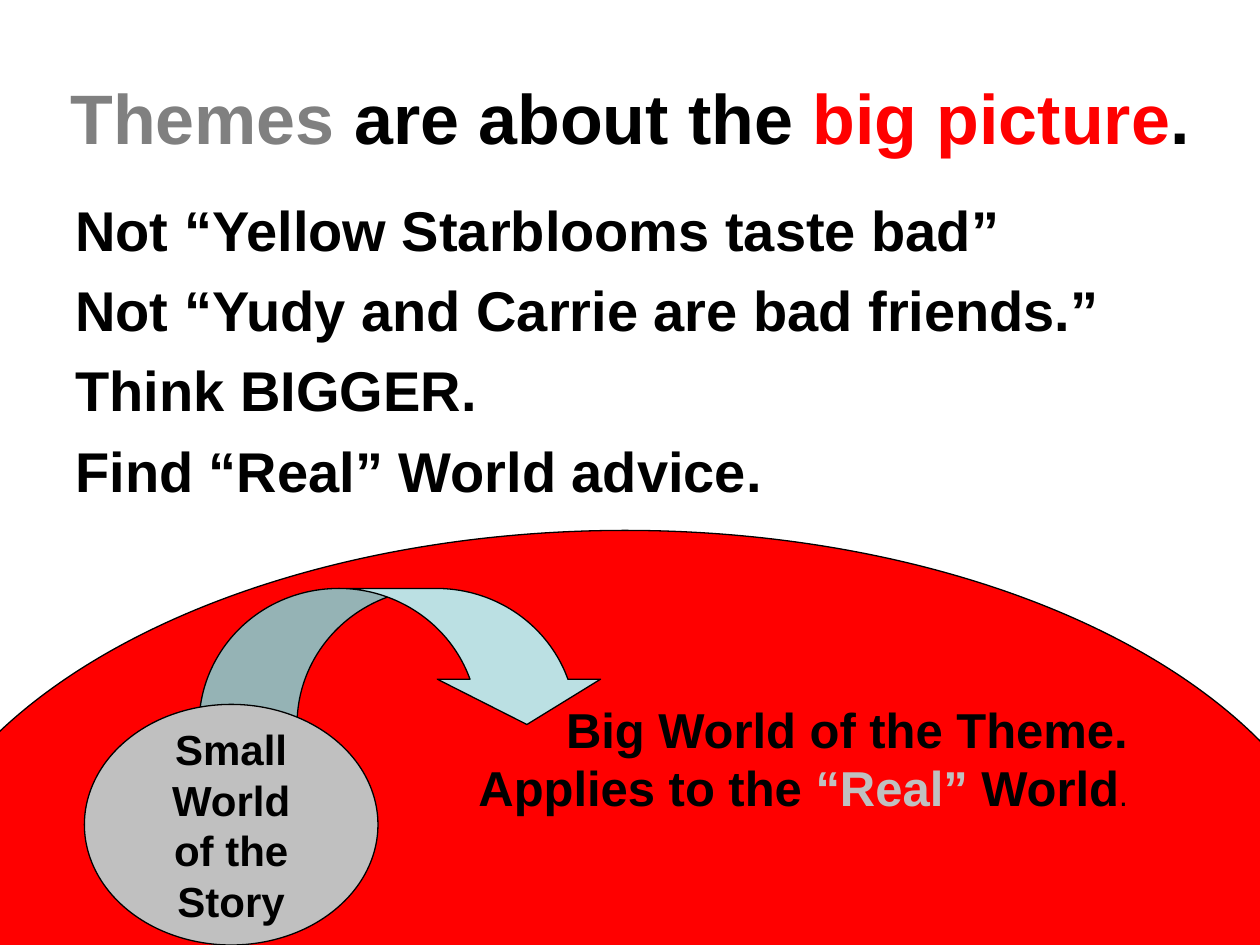
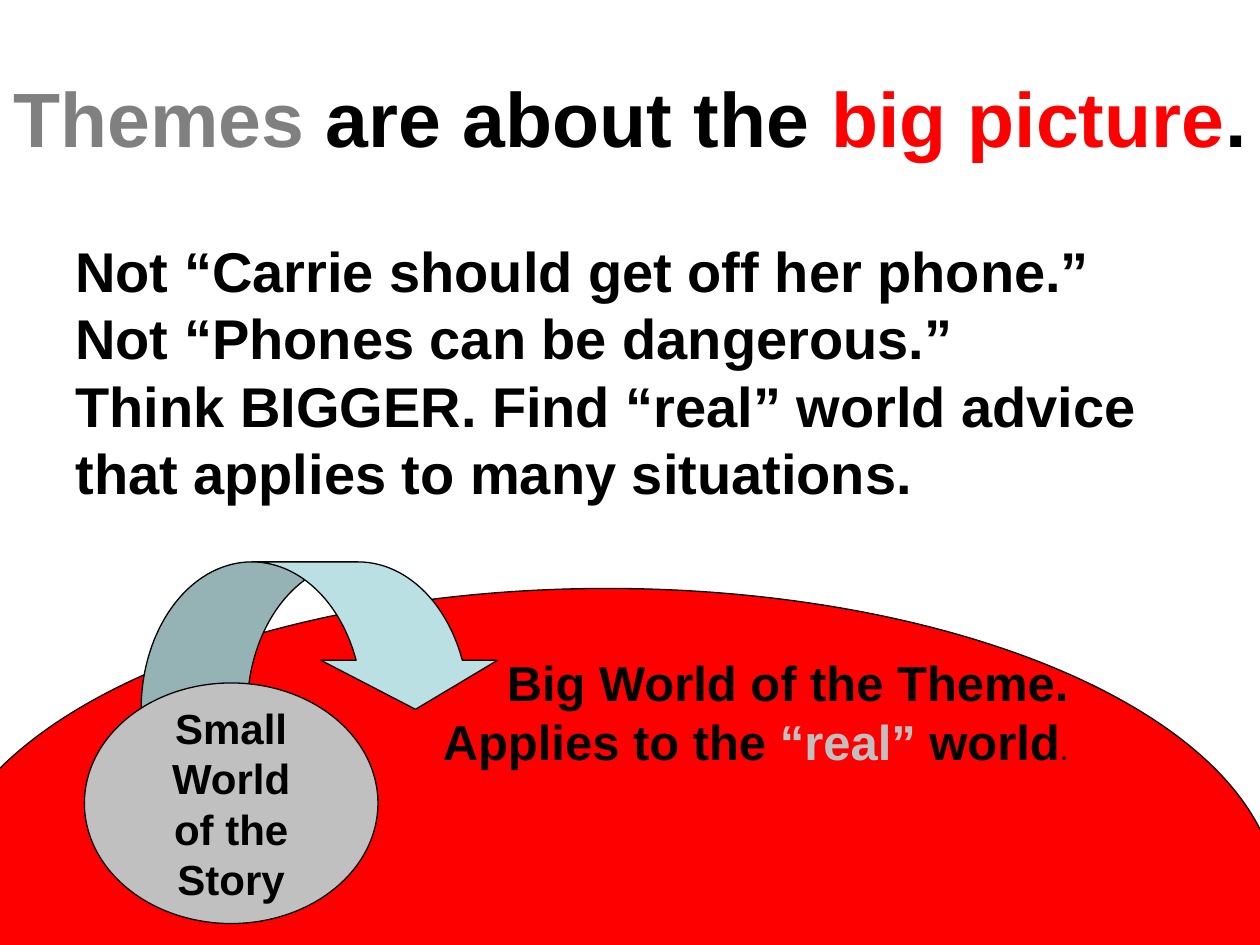
from pptx import Presentation
from pptx.dml.color import RGBColor
from pptx.enum.shapes import MSO_SHAPE as Shape
from pptx.enum.text import MSO_ANCHOR as Anchor, MSO_AUTO_SIZE as AutoSize, PP_ALIGN as Align
from pptx.util import Inches, Pt

BLACK = RGBColor(0x00, 0x00, 0x00)
RED = RGBColor(0xFF, 0x00, 0x00)
GREY = RGBColor(0x80, 0x80, 0x80)
SILVER = RGBColor(0xC0, 0xC0, 0xC0)
PALE_BLUE = RGBColor(0xBB, 0xE0, 0xE3)
FONT = "Arial"
WIDTH, HEIGHT = 10, 7.5

# A line is a list of spans: (text, format overrides).
TITLE = [("Themes", {"color": GREY}), (" are about the ", {}),
         ("big picture", {"color": RED}), (".", {})]
STORY = ["Small", "World", "of the", "Story"]
ARROW_BENDS = (0.72, 1.2, 0.333)

# Places are left, top, width, height in inches.
SLIDES = [
    {
        "title_size": 40,
        "advice": ["Not “Yellow Starblooms taste bad”",
                   "Not “Yudy and Carrie are bad friends.”",
                   "Think BIGGER.",
                   "Find “Real” World advice."],
        "advice_place": (0.5, 1.5, 9, 2.7),
        "advice_gap": 7.5,
        "real_world": ("“Real” ", "World"),
        "big_world": (-0.83, 4.21, 11.58, 6.58),
        "big_world_text": (3.05, 5.5, 6, 1),
        "arrow": (1.58, 4.67, 3.25, 1.08),
        "story_top": 5.59,
    },
    {
        "title_size": 44,
        "advice": ["Not “Carrie should get off her phone.”",
                   "Not “Phones can be dangerous.”",
                   "Think BIGGER. Find “real” world advice that applies to many situations."],
        "advice_place": (0.5, 1.83, 9, 2.26),
        "advice_gap": 0,
        "real_world": ("“real” ", "world"),
        "big_world": (-0.5, 4.67, 10.64, 4.95),
        "big_world_text": (2.58, 5.13, 6, 1),
        "arrow": (1.12, 4.46, 2.88, 1.17),
        "story_top": 5.42,
    },
]


def inches(place):
    return [Inches(length) for length in place]


def write(box, lines, size, align=Align.LEFT, anchor=Anchor.TOP, gap=0, wrap=True):
    """Fill a shape with bold lines, each a string or a list of spans."""
    frame = box.text_frame
    frame.word_wrap = wrap
    frame.auto_size = AutoSize.NONE
    frame.vertical_anchor = anchor
    for number, line in enumerate(lines):
        para = frame.paragraphs[0] if number == 0 else frame.add_paragraph()
        para.alignment = align
        para.space_after = Pt(gap)
        spans = [(line, {})] if isinstance(line, str) else line
        for text, changes in spans:
            span = para.add_run()
            span.text = text
            span.font.name = FONT
            span.font.size = Pt(changes.get("size", size))
            span.font.bold = changes.get("bold", True)
            span.font.color.rgb = changes.get("color", BLACK)


def add_outlined(page, kind, place, color):
    shape = page.shapes.add_shape(kind, *inches(place))
    shape.shadow.inherit = False
    shape.fill.solid()
    shape.fill.fore_color.rgb = color
    shape.line.color.rgb = BLACK
    shape.line.width = Pt(0.75)
    return shape


def add_title(page, size):
    title = page.shapes.title
    title.left, title.top, title.width, title.height = inches((0, 0.3, WIDTH, 1.25))
    title.text_frame.margin_left = title.text_frame.margin_right = 0
    write(title, [TITLE], size, align=Align.CENTER, anchor=Anchor.MIDDLE)


def add_worlds(page, content):
    """Draw the big world, its caption, the arrow and the small world."""
    add_outlined(page, Shape.OVAL, content["big_world"], RED)
    real, world = content["real_world"]
    caption = ["Big World of the Theme.",
               [("Applies to the ", {}), (real, {"color": SILVER}), (world, {}),
                (".", {"size": 18, "bold": False})]]
    box = page.shapes.add_textbox(*inches(content["big_world_text"]))
    write(box, caption, 28, align=Align.RIGHT)

    arrow = add_outlined(page, Shape.CURVED_DOWN_ARROW, content["arrow"], PALE_BLUE)
    for index, bend in enumerate(ARROW_BENDS):
        arrow.adjustments[index] = bend

    story = add_outlined(page, Shape.OVAL, (0.67, content["story_top"], 2.33, 1.91), SILVER)
    write(story, STORY, 24, align=Align.CENTER, anchor=Anchor.MIDDLE, wrap=False)


def main():
    deck = Presentation()
    deck.slide_width, deck.slide_height = inches((WIDTH, HEIGHT))
    title_only = deck.slide_layouts[5]
    for content in SLIDES:
        page = deck.slides.add_slide(title_only)
        add_title(page, content["title_size"])
        add_worlds(page, content)
        advice = page.shapes.add_textbox(*inches(content["advice_place"]))
        write(advice, content["advice"], 32, gap=content["advice_gap"])
    deck.save("out.pptx")


if __name__ == "__main__":
    main()
